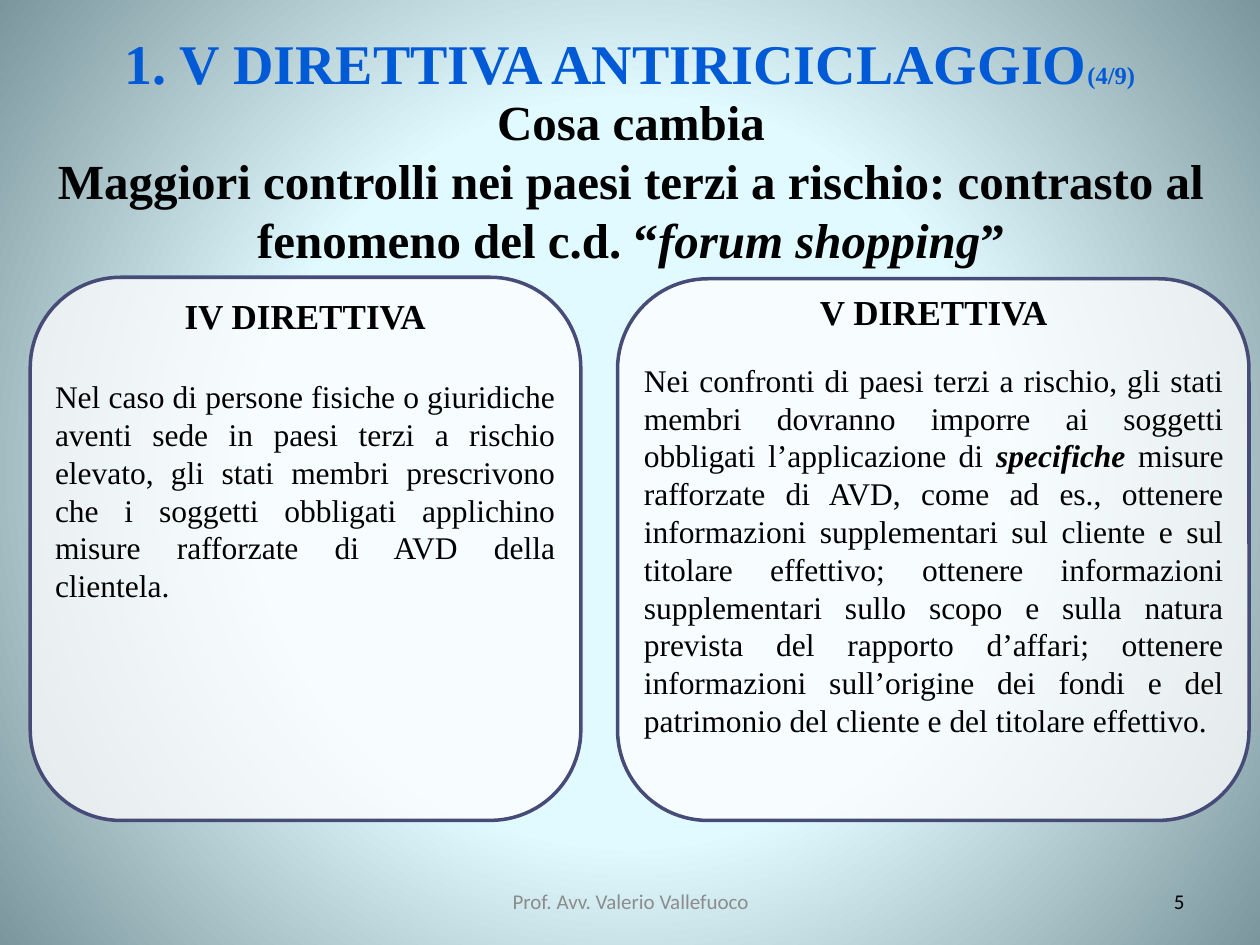
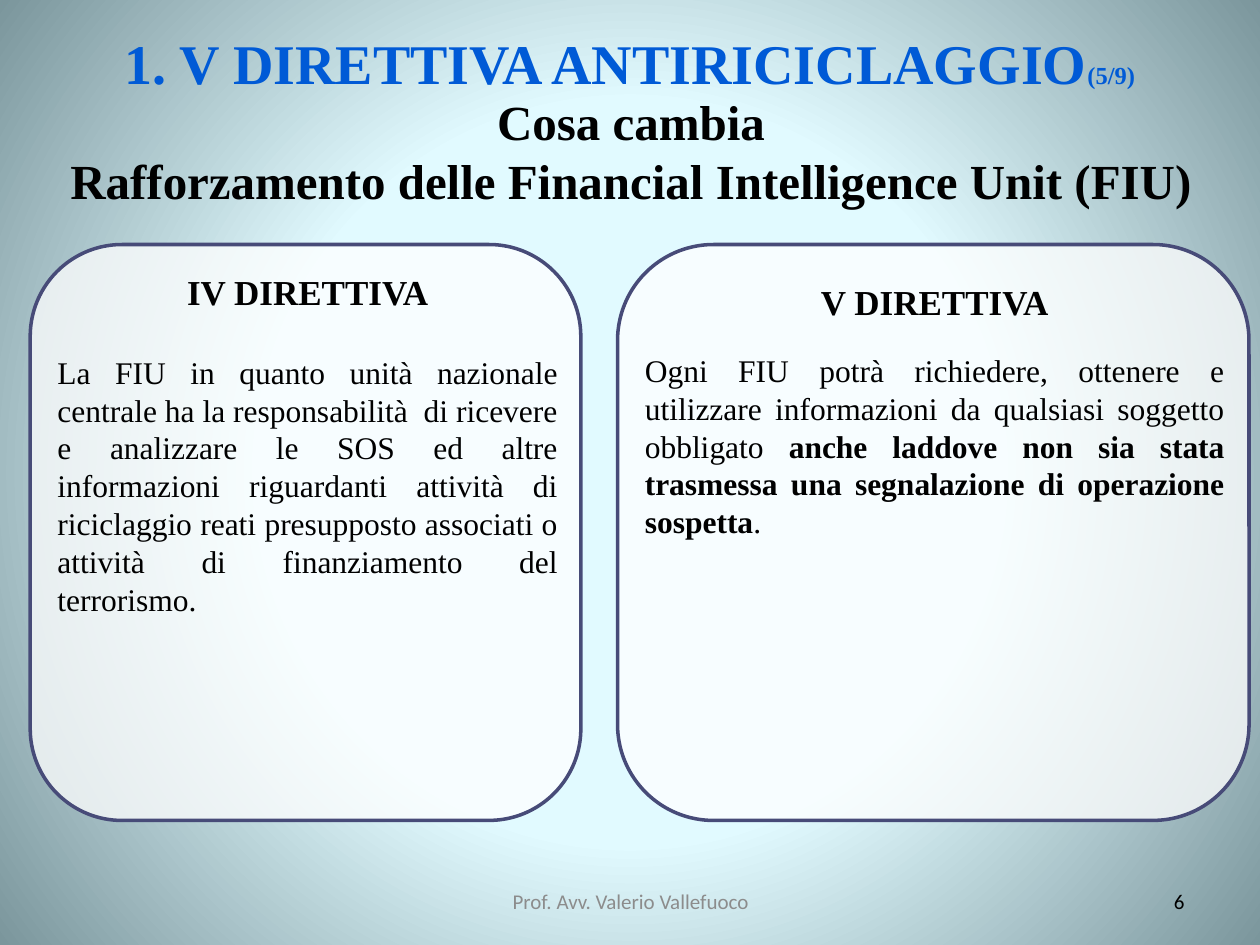
"""Builds two slides comparing the IV and V anti-money-laundering directives."""
from lxml import etree
from pptx import Presentation
from pptx.dml.color import RGBColor
from pptx.enum import shapes, text
from pptx.oxml.ns import qn
from pptx.util import Cm, Pt

BLACK = RGBColor(0, 0, 0)
WHITE = RGBColor(0xFF, 0xFF, 0xFF)
BLUE = RGBColor(0x00, 0x5A, 0xD6)
BORDER = RGBColor(0x47, 0x4B, 0x78)
GREY = RGBColor(0x8C, 0x8C, 0x8C)
BG_STOPS = [(0.47, RGBColor(0xE1, 0xFA, 0xFF)), (1, RGBColor(0x7B, 0x96, 0x9C))]
SERIF, SANS = "Times New Roman", "Calibri"
CENTER, RIGHT, JUSTIFY = (text.PP_ALIGN.CENTER, text.PP_ALIGN.RIGHT,
                          text.PP_ALIGN.JUSTIFY)

TITLE = "1. V DIRETTIVA ANTIRICICLAGGIO"
SUBTITLE = "Cosa cambia"
FOOTER = "Prof. Avv. Valerio Vallefuoco"
PANEL_BOTTOM = 16.54
COLUMNS = [
    dict(heading="IV DIRETTIVA", left=0.61, width=11.1, text_width=10.59, gap=23),
    dict(heading="V DIRETTIVA", left=12.45, width=12.73, text_width=12.19, gap=16),
]

SLIDES = [
    dict(
        number=5, part="(4/9)", subtitle_height=3.84,
        topic=[("Maggiori controlli nei paesi terzi a rischio: contrasto al "
                "fenomeno del c.d. “", "b"), ("forum shopping", "bi"), ("”", "b")],
        panels=[
            dict(top=5.59, alpha=76, text_at=(0.86, 5.82), text_height=6.58, body=[
                ("Nel caso di persone fisiche o giuridiche aventi sede in paesi terzi "
                 "a rischio elevato, gli stati membri prescrivono che i soggetti "
                 "obbligati applichino misure rafforzate di AVD della clientela.", "")]),
            dict(top=5.62, alpha=75, text_at=(12.73, 5.74), text_height=9.4, body=[
                ("Nei confronti di paesi terzi a rischio, gli stati membri dovranno "
                 "imporre ai soggetti obbligati l’applicazione di ", ""),
                ("specifiche ", "bi"),
                ("misure rafforzate di AVD, come ad es., ottenere informazioni "
                 "supplementari sul cliente e sul titolare effettivo; ottenere "
                 "informazioni supplementari sullo scopo e sulla natura prevista del "
                 "rapporto d’affari; ottenere informazioni sull’origine dei fondi e "
                 "del patrimonio del cliente e del titolare effettivo.", "")]),
        ]),
    dict(
        number=6, part="(5/9)", subtitle_height=2.64,
        topic=[("Rafforzamento delle Financial Intelligence Unit (FIU)", "b")],
        panels=[
            dict(top=4.93, alpha=74, text_at=(0.91, 5.33), text_height=7.34, body=[
                ("La FIU in quanto unità nazionale centrale ha la responsabilità  di "
                 "ricevere e analizzare le SOS ed altre informazioni riguardanti "
                 "attività di riciclaggio reati presupposto associati o attività di "
                 "finanziamento del terrorismo. ", "")]),
            dict(top=4.93, alpha=75, text_at=(12.75, 5.54), text_height=5.56, body=[
                ("Ogni FIU potrà richiedere, ottenere e utilizzare informazioni da "
                 "qualsiasi soggetto obbligato ", ""),
                ("anche laddove non sia stata trasmessa una segnalazione di "
                 "operazione sospetta", "b"), (".", "")]),
        ]),
]


def paint_background(s):
    fill = s.background.fill
    fill.gradient()
    for stop, (position, color) in zip(fill.gradient_stops, BG_STOPS):
        stop.position = position
        stop.color.rgb = color
    grad = s._element.find(".//" + qn("a:gradFill"))
    grad.remove(grad.find(qn("a:lin")))
    circle = etree.SubElement(grad, qn("a:path"), path="circle")
    etree.SubElement(circle, qn("a:fillToRect"),
                     {side: "50000" for side in "ltrb"})


def add_text(s, box, paragraphs, font=SERIF, color=BLACK, middle=False):
    """Each paragraph is (alignment, size, space after, [(text, style, size?)])."""
    tf = s.shapes.add_textbox(*map(Cm, box)).text_frame
    tf.word_wrap = True
    if middle:
        tf.vertical_anchor = text.MSO_ANCHOR.MIDDLE
    else:
        tf.auto_size = text.MSO_AUTO_SIZE.SHAPE_TO_FIT_TEXT
    for i, (align, size, after, runs) in enumerate(paragraphs):
        p = tf.add_paragraph() if i else tf.paragraphs[0]
        p.alignment = align
        p.space_after = Pt(after)
        for words, style, *own_size in runs:
            r = p.add_run()
            r.text = words
            r.font.name = font
            r.font.size = Pt(own_size[0] if own_size else size)
            r.font.bold = "b" in style
            r.font.italic = "i" in style
            r.font.color.rgb = color


def add_panel(s, column, panel):
    top = panel["top"]
    sp = s.shapes.add_shape(
        shapes.MSO_SHAPE.ROUNDED_RECTANGLE, Cm(column["left"]), Cm(top),
        Cm(column["width"]), Cm(PANEL_BOTTOM - top))
    sp.shadow.inherit = False
    sp.fill.solid()
    sp.fill.fore_color.rgb = WHITE
    color = sp._element.spPr.find(qn("a:solidFill"))[0]
    etree.SubElement(color, qn("a:alpha"), val=str(panel["alpha"] * 1000))
    sp.line.color.rgb = BORDER
    sp.line.width = Pt(2)


def add_slide(prs, data):
    s = prs.slides.add_slide(prs.slide_layouts[6])
    paint_background(s)
    add_text(s, (18.21, 17.65, 5.92, 1.02),
             [(RIGHT, 12, 0, [(str(data["number"]), "")])], SANS, middle=True)
    add_text(s, (0.5, 0.46, 24.4, 1.63),
             [(CENTER, 32, 0, [(TITLE, "b"), (data["part"], "b", 14)])], color=BLUE)
    add_text(s, (0.02, 1.73, 25.4, data["subtitle_height"]),
             [(CENTER, 28, 0, [(SUBTITLE, "b")]), (CENTER, 28, 0, data["topic"])])
    pairs = list(zip(COLUMNS, data["panels"]))
    for column, panel in pairs:
        add_panel(s, column, panel)
    for column, panel in pairs:
        box = (*panel["text_at"], column["text_width"], panel["text_height"])
        add_text(s, box, [(CENTER, 20, column["gap"], [(column["heading"], "b")]),
                          (JUSTIFY, 18, 0, panel["body"])])
    add_text(s, (8.69, 17.65, 8.05, 1.02),
             [(CENTER, 12, 0, [(FOOTER, "")])], SANS, GREY, middle=True)


def main():
    prs = Presentation()
    prs.slide_width, prs.slide_height = Cm(25.4), Cm(19.05)
    for data in SLIDES:
        add_slide(prs, data)
    prs.save("out.pptx")


if __name__ == "__main__":
    main()
